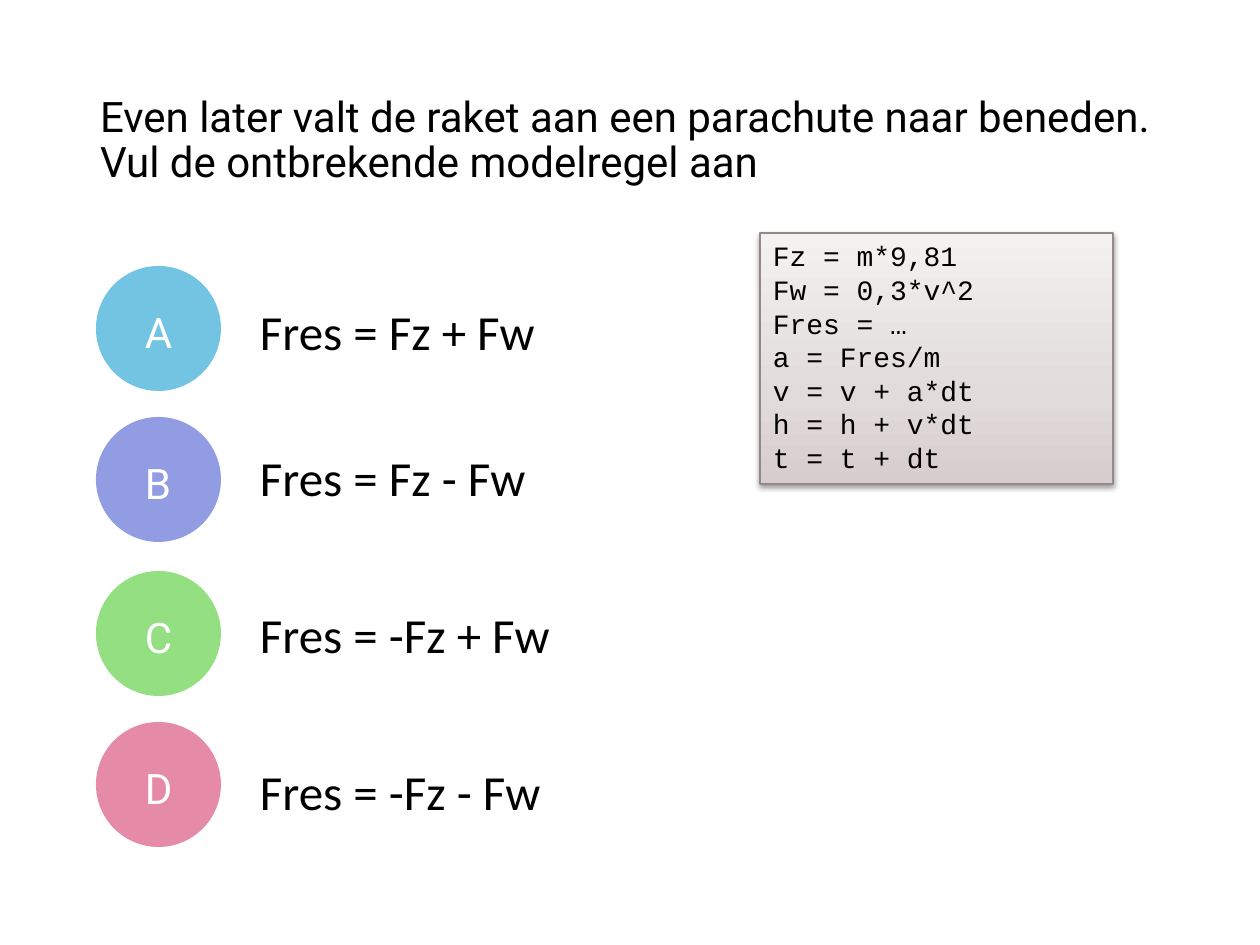
from lxml import etree
from pptx import Presentation
from pptx.dml.color import RGBColor
from pptx.enum.shapes import MSO_SHAPE
from pptx.enum.text import MSO_ANCHOR, MSO_AUTO_SIZE, PP_ALIGN
from pptx.oxml import parse_xml
from pptx.oxml.ns import nsdecls, qn
from pptx.util import Pt

OVAL, RECTANGLE = MSO_SHAPE.OVAL, MSO_SHAPE.RECTANGLE
MIDDLE, TOP = MSO_ANCHOR.MIDDLE, MSO_ANCHOR.TOP
LEFT = PP_ALIGN.LEFT
NO_AUTOSIZE = MSO_AUTO_SIZE.NONE

EMU_PER_PX = 914400 / 126
TITLE_LAYOUT = 5
COLORS = {
    "text": "000000", "letter": "FFFFFF", "code_line": "938989",
    "A": "73C3E3", "B": "919CE3", "C": "95DF83", "D": "E58BA8",
}
CODE_GRADIENT = [(0, "D6CDCD"), (35, "E2DBDB"), (100, "F4F1F1")]

TITLE = ("Even later valt de raket aan een parachute naar beneden. "
         "Vul de ontbrekende modelregel aan")
# letter, top of circle, answer, top of answer
OPTIONS = [
    ("A", 266, "Fres = Fz + Fw", 285),
    ("B", 417, "Fres = Fz - Fw", 431),
    ("C", 571, "Fres = -Fz + Fw", 588),
    ("D", 722, "Fres = -Fz - Fw", 745),
]
MODEL_LINES = [
    "Fz = m*9,81", "Fw = 0,3*v^2", "Fres = …", "a = Fres/m",
    "v = v + a*dt", "h = h + v*dt", "t = t + dt",
]


def px(*lengths):
    return [round(length * EMU_PER_PX) for length in lengths]


def rgb(name):
    return RGBColor.from_string(COLORS[name])


class QuizSlide:
    heading_font, answer_font, code_font = "Roboto", "Calibri", "Courier New"

    def __init__(self, presentation):
        layout = presentation.slide_layouts[TITLE_LAYOUT]
        self.slide = presentation.slides.add_slide(layout)

    def set_text(self, shape, lines, font, size, color="text", spacing=1.0,
                 anchor=MIDDLE, insets=(13, 6)):
        frame = shape.text_frame
        frame.text = "\n".join(lines)
        frame.word_wrap = True
        frame.auto_size = NO_AUTOSIZE
        frame.vertical_anchor = anchor
        frame.margin_left = frame.margin_right = px(insets[0])[0]
        frame.margin_top = frame.margin_bottom = px(insets[1])[0]
        for paragraph in frame.paragraphs:
            paragraph.alignment = LEFT
            paragraph.line_spacing = spacing
            paragraph.font.name = font
            paragraph.font.size = Pt(size)
            paragraph.font.color.rgb = rgb(color)

    def title(self, text, left, top, width, height):
        shape = self.slide.shapes.title
        shape.left, shape.top, shape.width, shape.height = px(left, top, width, height)
        self.set_text(shape, [text], self.heading_font, 24, spacing=0.9)

    def badge(self, letter, left, top, size):
        group = self.slide.shapes.add_group_shape()
        circle = group.shapes.add_shape(OVAL, *px(left, top, size, size))
        circle.shadow.inherit = False
        circle.fill.solid()
        circle.fill.fore_color.rgb = rgb(letter)
        circle.line.fill.background()
        label = group.shapes.add_textbox(*px(left + 44, top + 31, 49, 59))
        self.set_text(label, [letter], self.heading_font, 24, "letter", 1.2, insets=(5, 5))

    def answer(self, text, left, top, width, height):
        box = self.slide.shapes.add_textbox(*px(left, top, width, height))
        self.set_text(box, [text], self.answer_font, 28, spacing=1.2, insets=(5, 5))

    def code_panel(self, lines, left, top, width, height):
        panel = self.slide.shapes.add_shape(RECTANGLE, *px(left, top, width, height))
        panel.line.color.rgb = rgb("code_line")
        panel.line.width = Pt(0.75)
        self.gradient(panel, CODE_GRADIENT)
        self.soft_shadow(panel)
        self.set_text(panel, lines, self.code_font, 16, anchor=TOP)

    def gradient(self, shape, stops):
        shape.fill.gradient()
        shape.fill.gradient_angle = 90
        stop_list = shape.element.spPr.find(".//" + qn("a:gsLst"))
        for stop in list(stop_list):
            stop_list.remove(stop)
        for position, color in stops:
            stop = etree.SubElement(stop_list, qn("a:gs"), pos=str(position * 1000))
            etree.SubElement(stop, qn("a:srgbClr"), val=color)

    def soft_shadow(self, shape):
        shape.shadow.inherit = False
        effects = shape.element.spPr.find(qn("a:effectLst"))
        effects.append(parse_xml(
            f'<a:outerShdw {nsdecls("a")} blurRad="40000" dist="20000" '
            'dir="5400000" rotWithShape="0"><a:srgbClr val="000000">'
            '<a:alpha val="38000"/></a:srgbClr></a:outerShdw>'))


def main():
    presentation = Presentation()
    presentation.slide_width, presentation.slide_height = px(1260, 945)
    quiz = QuizSlide(presentation)

    # Question
    quiz.title(TITLE, 87, 50, 1086, 183)

    # Answer options
    for letter, badge_top, _, _ in OPTIONS:
        quiz.badge(letter, 96, badge_top, 125)
    for _, _, text, answer_top in OPTIONS:
        quiz.answer(text, 255, answer_top, 848, 81)

    # Model rules
    quiz.code_panel(MODEL_LINES, 760, 233, 353, 251)

    presentation.save("out.pptx")


if __name__ == "__main__":
    main()
